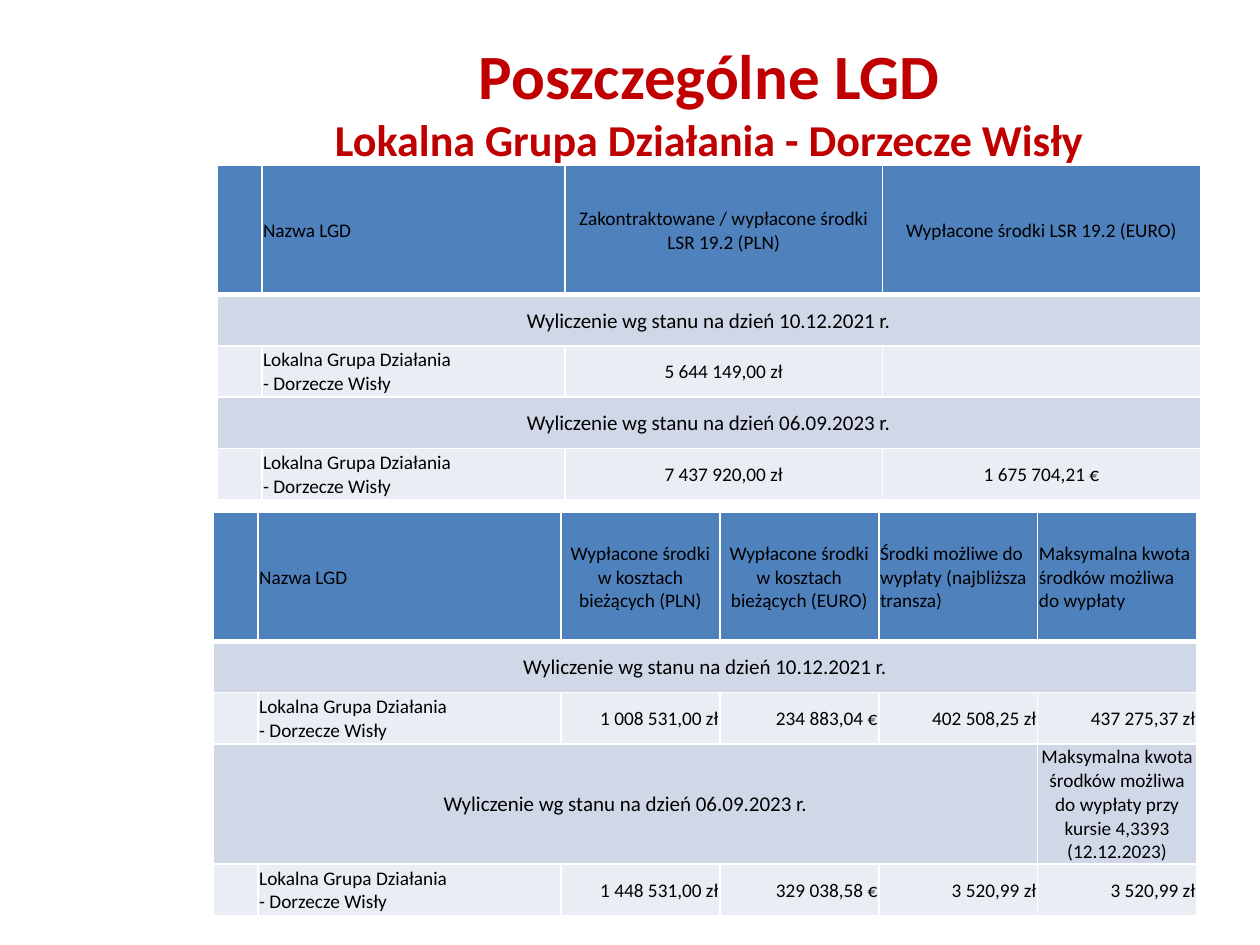
import dataclasses

import lxml.etree
import pptx
import pptx.dml.color
import pptx.enum.text
import pptx.oxml.ns
import pptx.util

Pt = pptx.util.Pt
ALIGN = pptx.enum.text.PP_ALIGN
ANCHOR = pptx.enum.text.MSO_ANCHOR
COLUMN_ALIGN = {"l": ALIGN.LEFT, "c": ALIGN.CENTER, "r": ALIGN.RIGHT}


@dataclasses.dataclass(frozen=True)
class Theme:
    font: str = "Calibri"
    title: str = "C00000"
    text: str = "000000"
    rule: str = "FFFFFF"
    header: str = "4F81BD"
    band: str = "D0D8E8"
    body: str = "E9EDF4"
    heading_size: float = 36
    subheading_size: float = 25.2
    band_size: float = 12
    body_size: float = 11
    thin: float = 1
    thick: float = 3


class Report:
    """Holds the theme and the current page, and adds elements to it."""

    def __init__(self, deck, theme):
        self.theme = theme
        self.page = deck.slides.add_slide(deck.slide_layouts[5])

    def add_span(self, para, text, size, color, bold=False):
        span = para.add_run()
        span.text = text
        span.font.name = self.theme.font
        span.font.size = Pt(size)
        span.font.bold = bold
        span.font.color.rgb = pptx.dml.color.RGBColor.from_string(color)

    def add_title(self, heading, subheading, left, top, width, height):
        box = self.page.shapes.title
        box.left, box.top, box.width, box.height = map(Pt, (left, top, width, height))
        frame = box.text_frame
        frame.auto_size = pptx.enum.text.MSO_AUTO_SIZE.NONE
        frame.word_wrap = True
        frame.vertical_anchor = ANCHOR.BOTTOM
        frame.margin_top = frame.margin_bottom = 0
        para = frame.paragraphs[0]
        para.alignment = ALIGN.CENTER
        self.add_span(para, heading, self.theme.heading_size, self.theme.title, True)
        para.add_line_break()
        self.add_span(para, subheading, self.theme.subheading_size, self.theme.title, True)

    def add_borders(self, cell, top, bottom):
        properties = cell._tc.get_or_add_tcPr()
        sides = {"lnL": self.theme.thin, "lnR": self.theme.thin, "lnT": top, "lnB": bottom}
        for side, width in sides.items():
            line = lxml.etree.SubElement(properties, pptx.oxml.ns.qn(f"a:{side}"), w=str(Pt(width)))
            fill = lxml.etree.SubElement(line, pptx.oxml.ns.qn("a:solidFill"))
            lxml.etree.SubElement(fill, pptx.oxml.ns.qn("a:srgbClr"), val=self.theme.rule)

    def fill_cell(self, cell, text, align, size, color):
        cell.margin_left = cell.margin_right = cell.margin_top = Pt(0.75)
        cell.margin_bottom = 0
        cell.vertical_anchor = ANCHOR.MIDDLE
        cell.fill.solid()
        cell.fill.fore_color.rgb = pptx.dml.color.RGBColor.from_string(color)
        frame = cell.text_frame
        for index, line in enumerate(text.split("\n") if text else []):
            para = frame.add_paragraph() if index else frame.paragraphs[0]
            para.alignment = COLUMN_ALIGN[align]
            self.add_span(para, line, size, self.theme.text)

    def add_table(self, left, top, widths, heights, rows, header_align, body_align):
        theme = self.theme
        shape = self.page.shapes.add_table(
            len(rows), len(widths), Pt(left), Pt(top), Pt(sum(widths)), Pt(sum(heights)))
        table = shape.table
        table.first_row = table.horz_banding = False
        for column, width in zip(table.columns, widths):
            column.width = Pt(width)
        for number, (row, height, values) in enumerate(zip(table.rows, heights, rows)):
            row.height = Pt(height)
            is_band = number % 2 == 1
            color = theme.header if number == 0 else theme.band if is_band else theme.body
            merged = len(widths) - len(values)
            if merged:
                table.cell(number, 0).merge(table.cell(number, merged))
            texts = values[:1] + [""] * merged + values[1:]
            aligns = header_align if number == 0 else "c" * len(widths) if is_band else body_align
            for index, (text, align) in enumerate(zip(texts, aligns)):
                cell = table.cell(number, index)
                size = theme.band_size if is_band and index == 0 else theme.body_size
                self.add_borders(cell, theme.thick if number == 1 else theme.thin,
                                 theme.thick if number == 0 else theme.thin)
                self.fill_cell(cell, text, align, size, color)


def main():
    deck = pptx.Presentation()
    deck.slide_width, deck.slide_height = Pt(720), Pt(540)
    report = Report(deck, Theme())
    group = "Lokalna Grupa Działania\n- Dorzecze Wisły"
    earlier = "Wyliczenie wg stanu na dzień 10.12.2021 r."
    later = "Wyliczenie wg stanu na dzień 06.09.2023 r."
    name_widths = [25.5, 173.2]
    heights = [74] + [29.3] * 4

    report.add_title("Poszczególne LGD", "Lokalna Grupa Działania - Dorzecze Wisły",
                     96, 9.5, 618.5, 85)
    report.add_table(121.9, 292.6, name_widths + [90.8] * 4, heights, [
        ["", "Nazwa LGD", "Wypłacone środki w kosztach bieżących (PLN)",
         "Wypłacone środki w kosztach bieżących (EURO)",
         "Środki możliwe do wypłaty (najbliższa transza)",
         "Maksymalna kwota środków możliwa do wypłaty"],
        [earlier],
        ["", group, "1 008 531,00 zł", "234 883,04 €", "402 508,25 zł", "437 275,37 zł"],
        [later, "Maksymalna kwota środków możliwa do wypłaty przy kursie 4,3393 (12.12.2023)"],
        ["", group, "1 448 531,00 zł", "329 038,58 €", "3 520,99 zł", "3 520,99 zł"],
    ], "llccll", "llrrrr")
    report.add_table(124.1, 94.4, name_widths + [181.6] * 2, heights, [
        ["", "Nazwa LGD", "Zakontraktowane / wypłacone środki LSR 19.2 (PLN)",
         "Wypłacone środki LSR 19.2 (EURO)"],
        [earlier],
        ["", group, "5 644 149,00 zł", ""],
        [later],
        ["", group, "7 437 920,00 zł", "1 675 704,21 €"],
    ], "llcc", "llcc")
    deck.save("out.pptx")


if __name__ == "__main__":
    main()
